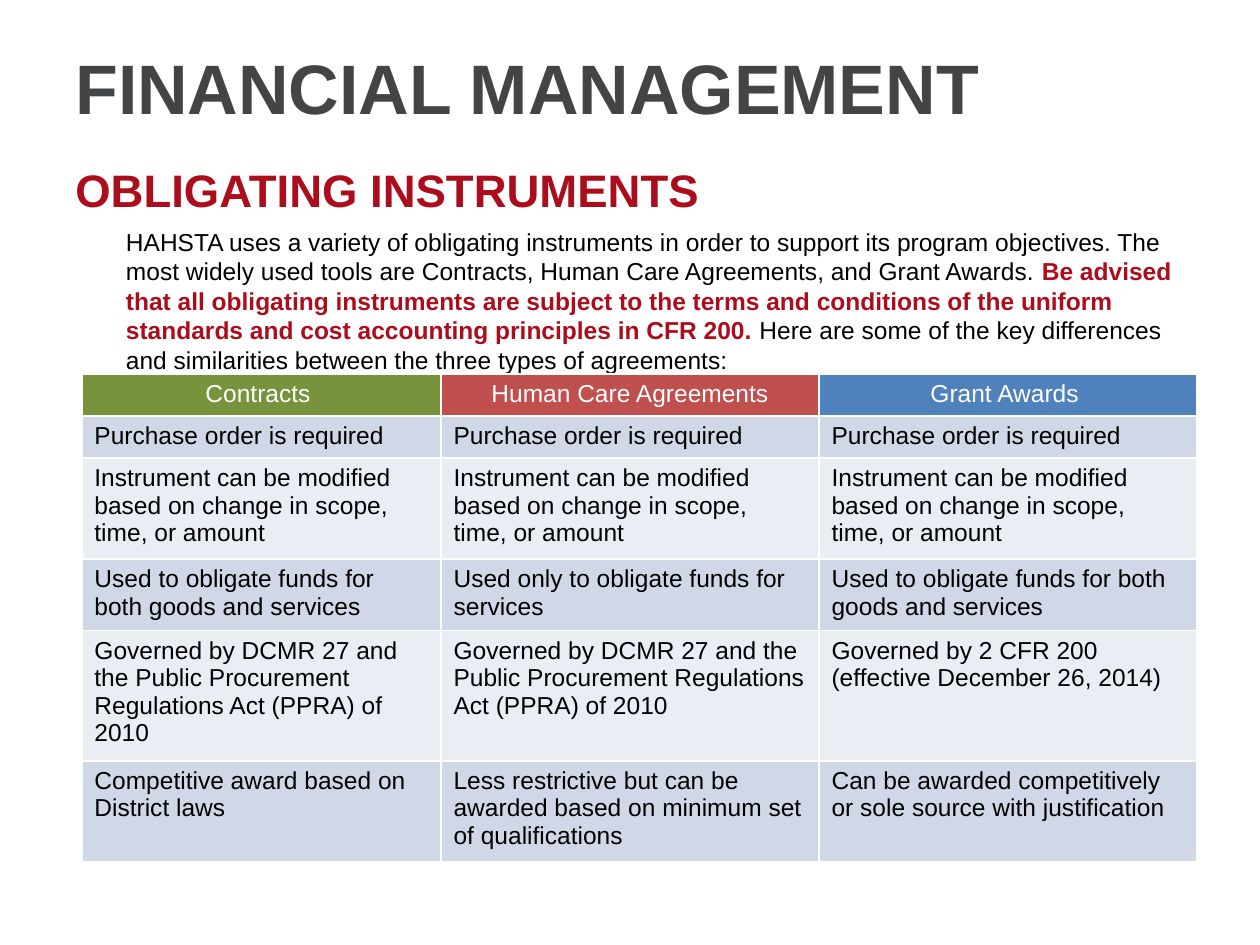
from pptx import Presentation
from pptx.dml.color import RGBColor
from pptx.enum.text import MSO_ANCHOR, PP_ALIGN
from pptx.oxml import parse_xml
from pptx.oxml.ns import nsdecls
from pptx.util import Cm, Pt

CENTER, LEFT = PP_ALIGN.CENTER, PP_ALIGN.LEFT
TOP, MIDDLE = MSO_ANCHOR.TOP, MSO_ANCHOR.MIDDLE
FONT = "Arial"
COLORS = {
    "title": "434445", "accent": "AC0D1C", "text": "000000", "white": "FFFFFF",
    "contracts": "77933C", "care": "C0504D", "grants": "4F81BD",
    "dark_band": "D0D8E8", "light_band": "E9EDF4",
}
INTRO = [
    ("HAHSTA uses a variety of obligating instruments in order to support its "
     "program objectives. The most widely used tools are Contracts, Human Care "
     "Agreements, and Grant Awards. ", "text", False),
    ("Be advised that all obligating instruments are subject to the terms and "
     "conditions of the uniform standards and cost accounting principles in "
     "CFR 200. ", "accent", True),
    ("Here are some of the key differences and similarities between the three "
     "types of agreements:", "text", False),
]
INSTRUMENTS = [("Contracts ", "contracts"), ("Human Care Agreements", "care"),
               ("Grant Awards ", "grants")]
MODIFICATION = "Instrument can be modified based on change in scope, time, or amount"
GOODS_AND_SERVICES = "Used to obligate funds for both goods and services"
PROCUREMENT_ACT = ("Governed by DCMR 27 and the Public Procurement Regulations "
                   "Act (PPRA) of 2010")
COMPARISON = [
    ["Purchase order is required"] * 3,
    [MODIFICATION] * 3,
    [GOODS_AND_SERVICES, "Used only to obligate funds for services",
     GOODS_AND_SERVICES],
    [PROCUREMENT_ACT, PROCUREMENT_ACT,
     "Governed by 2 CFR 200 (effective December 26, 2014)"],
    ["Competitive award based on District laws",
     "Less restrictive but can be awarded based on minimum set of qualifications",
     "Can be awarded competitively or sole source with justification"],
]
COLUMN_WIDTHS = (7.24, 7.62, 7.62)
ROW_HEIGHTS = (0.81, 0.81, 1.92, 1.36, 2.47, 1.92)


def rgb(name):
    """Return the named palette colour."""
    return RGBColor.from_string(COLORS[name])


def style_font(font, size, color, bold=False):
    """Apply the slide's typeface with a size, colour and weight."""
    font.name, font.size, font.bold = FONT, Pt(size), bold
    font.color.rgb = rgb(color)


def add_text(slide, box, runs, size, anchor=TOP):
    """Add a wrapped paragraph of (text, colour, bold) runs and return it."""
    frame = slide.shapes.add_textbox(*map(Cm, box)).text_frame
    frame.word_wrap = True
    frame.vertical_anchor = anchor
    paragraph = frame.paragraphs[0]
    for text, color, bold in runs:
        run = paragraph.add_run()
        run.text = text
        style_font(run.font, size, color, bold)
    return paragraph


def add_intro(slide, box):
    """Add the indented introduction."""
    intro = add_text(slide, box, INTRO, 14)
    intro._p.get_or_add_pPr().set("marL", str(Cm(1.02)))


def set_borders(cell):
    """Draw thin white borders around a cell."""
    properties = cell._tc.get_or_add_tcPr()
    for index, side in enumerate("LRTB"):
        properties.insert(index, parse_xml(
            f'<a:ln{side} {nsdecls("a")} w="{Pt(1)}"><a:solidFill>'
            f'<a:srgbClr val="{COLORS["white"]}"/></a:solidFill></a:ln{side}>'))


def fill_cell(cell, text, fill, color="text", align=LEFT):
    """Write and format one table cell."""
    cell.text = text
    cell.fill.solid()
    cell.fill.fore_color.rgb = rgb(fill)
    paragraph = cell.text_frame.paragraphs[0]
    paragraph.alignment = align
    style_font(paragraph.runs[0].font, 14, color)
    set_borders(cell)


def add_comparison(slide, left, top):
    """Add the table that compares the three instruments."""
    box = (left, top, sum(COLUMN_WIDTHS), sum(ROW_HEIGHTS))
    table = slide.shapes.add_table(
        len(ROW_HEIGHTS), len(COLUMN_WIDTHS), *map(Cm, box)).table
    for column, width in zip(table.columns, COLUMN_WIDTHS):
        column.width = Cm(width)
    for row, height in zip(table.rows, ROW_HEIGHTS):
        row.height = Cm(height)
    for c, (name, fill) in enumerate(INSTRUMENTS):
        fill_cell(table.cell(0, c), name, fill, "white", CENTER)
    for r, texts in enumerate(COMPARISON, 1):
        band = "dark_band" if r % 2 else "light_band"
        for c, text in enumerate(texts):
            fill_cell(table.cell(r, c), text, band)


def main():
    """Build and save the slide."""
    deck = Presentation()
    deck.slide_width, deck.slide_height = Cm(25.4), Cm(19.05)
    slide = deck.slides.add_slide(deck.slide_layouts[6])
    add_text(slide, (1.27, 0.67, 22.86, 2.16),
             [("FINANCIAL MANAGEMENT", "title", True)], 40, MIDDLE)
    add_intro(slide, (1.27, 4.45, 22.86, 2.95))
    add_text(slide, (1.27, 3.15, 22.86, 1.19),
             [("OBLIGATING INSTRUMENTS", "accent", True)], 26)
    add_comparison(slide, 1.65, 7.54)
    deck.save("out.pptx")


if __name__ == "__main__":
    main()
